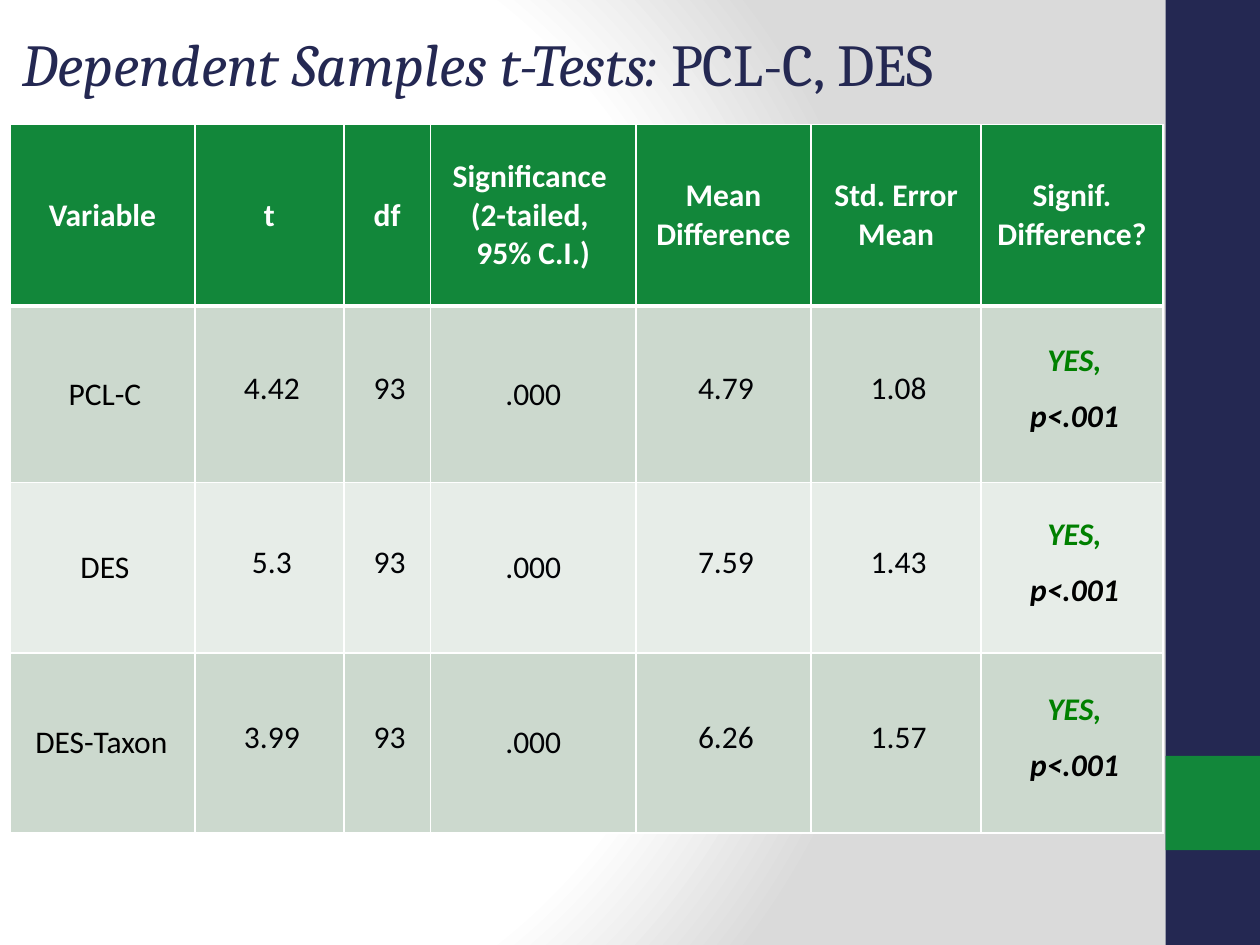
from pptx import Presentation, oxml
from pptx import util as u
from pptx.dml.color import RGBColor
from pptx.enum import shapes, text
from pptx.oxml import ns

NAVY = RGBColor(0x24, 0x28, 0x52)
GREEN = RGBColor(0x12, 0x87, 0x3A)
YES_GREEN = RGBColor(0x00, 0x80, 0x00)
WHITE = RGBColor(0xFF, 0xFF, 0xFF)
BLACK = RGBColor(0x00, 0x00, 0x00)
INK = RGBColor(0x01, 0x02, 0x05)
SILVER = RGBColor(0xDA, 0xDA, 0xDA)
BANDS = [RGBColor(0xCC, 0xD9, 0xCE), RGBColor(0xE7, 0xED, 0xE8)]

COLUMN_WIDTHS = [3.73, 3, 1.75, 4.14, 3.53, 3.43, 3.66]
ROW_HEIGHTS = [3.66, 3.56, 3.43, 3.63]
HEADERS = ["Variable", "t", "df", "Significance \n(2-tailed, \n95% C.I.)",
           "Mean Difference", "Std. Error Mean", "Signif. Difference?"]
RESULTS = [
    ["PCL-C", "4.42", "93", ".000", "4.79", "1.08"],
    ["DES", "5.3", "93", ".000", "7.59", "1.43"],
    ["DES-Taxon ", "3.99", "93", ".000", "6.26", "1.57"],
]
VERDICT = [("YES,", YES_GREEN), ("p<.001", BLACK)]


class SlideBuilder:
    def __init__(self, presentation):
        self.slide = presentation.slides.add_slide(presentation.slide_layouts[6])
        self.body = {"name": "Calibri", "size": u.Pt(18), "bold": False}
        self.strong = {**self.body, "bold": True}
        self.heading = {"name": "Cambria", "size": u.Pt(34)}

    def apply(self, run, style, color):
        for name, value in style.items():
            setattr(run.font, name, value)
        run.font.color.rgb = color

    def background(self, stops):
        self.slide.background.fill.gradient()
        gradient = self.slide.element.find(".//" + ns.qn("a:gradFill"))
        entries = "".join(
            f'<a:gs pos="{position * 1000}"><a:srgbClr val="{color}"/></a:gs>'
            for position, color in stops)
        gradient.getparent().replace(gradient, oxml.parse_xml(
            f'<a:gradFill {ns.nsdecls("a")} rotWithShape="1"><a:gsLst>{entries}</a:gsLst>'
            '<a:path path="circle"><a:fillToRect l="20000" t="50000" r="100000" b="50000"/>'
            '</a:path></a:gradFill>'))

    def bar(self, left, top, width, height, color):
        shape = self.slide.shapes.add_shape(
            shapes.MSO_SHAPE.RECTANGLE, *map(u.Cm, (left, top, width, height)))
        shape.shadow.inherit = False
        shape.fill.solid()
        shape.fill.fore_color.rgb = color
        shape.line.fill.background()

    def title(self, left, top, width, height, parts):
        shape = self.slide.shapes.add_textbox(*map(u.Cm, (left, top, width, height)))
        frame = shape.text_frame
        frame.word_wrap = True
        frame.vertical_anchor = text.MSO_ANCHOR.MIDDLE
        for words, italic in parts:
            run = frame.paragraphs[0].add_run()
            run.text = words
            self.apply(run, {**self.heading, "italic": italic}, NAVY)

    def table(self, left, top, widths, heights):
        table = self.slide.shapes.add_table(
            len(heights), len(widths),
            *map(u.Cm, (left, top, sum(widths), sum(heights)))).table
        for column, width in zip(table.columns, widths):
            column.width = u.Cm(width)
        for row, height in zip(table.rows, heights):
            row.height = u.Cm(height)
        return table

    def cell(self, cell, lines, style, fill, spacing=None, indent=0, margin=None, top=1, bottom=1):
        properties = cell._tc.get_or_add_tcPr()
        for side, points in zip("LRTB", (1, 1, top, bottom)):
            properties.append(oxml.parse_xml(
                f'<a:ln{side} {ns.nsdecls("a")} w="{u.Pt(points)}"><a:solidFill>'
                f'<a:srgbClr val="{WHITE}"/></a:solidFill></a:ln{side}>'))
        cell.fill.solid()
        cell.fill.fore_color.rgb = fill
        cell.vertical_anchor = text.MSO_ANCHOR.MIDDLE
        if margin is not None:
            for side in ("left", "top", "right", "bottom"):
                setattr(cell, f"margin_{side}", u.Cm(margin))
        frame = cell.text_frame
        for index, (words, color) in enumerate(lines):
            paragraph = frame.add_paragraph() if index else frame.paragraphs[0]
            paragraph.text = words
            paragraph.alignment = text.PP_ALIGN.CENTER
            paragraph._p.get_or_add_pPr().set("marL", str(u.Cm(indent)))
            if spacing:
                paragraph.line_spacing = u.Pt(spacing)
            if index:
                paragraph.space_before = u.Pt(spacing)
            for run in paragraph.runs:
                self.apply(run, style, color)


def main():
    presentation = Presentation()
    presentation.slide_width = u.Cm(25.4)
    presentation.slide_height = u.Cm(19.05)
    builder = SlideBuilder(presentation)
    builder.background([(0, WHITE), (75, WHITE), (100, SILVER)])
    builder.bar(23.5, 0, 1.9, 19.05, NAVY)
    builder.bar(23.5, 15.24, 1.9, 1.9, GREEN)

    table = builder.table(0.2, 2.51, COLUMN_WIDTHS, ROW_HEIGHTS)
    for column, header in enumerate(HEADERS):
        builder.cell(table.cell(0, column), [(header, WHITE)], builder.strong, GREEN, bottom=3)
    for row, values in enumerate(RESULTS, 1):
        fill = BANDS[(row - 1) % 2]
        top = 3 if row == 1 else 1
        for column, value in enumerate(values):
            name, significance = column == 0, column == 3
            builder.cell(table.cell(row, column), [(value, BLACK if name else INK)],
                         builder.body, fill, margin=0, top=top,
                         spacing=None if name or significance else 16,
                         indent=0 if significance else 0.1)
        builder.cell(table.cell(row, len(values)), VERDICT, {**builder.strong, "italic": True},
                     fill, spacing=16, indent=0.1, top=top)

    builder.title(0.2, 0.2, 25.1, 2.11,
                  [("Dependent Samples t-Tests: ", True), ("PCL-C, DES", False)])
    presentation.save("out.pptx")


if __name__ == "__main__":
    main()
